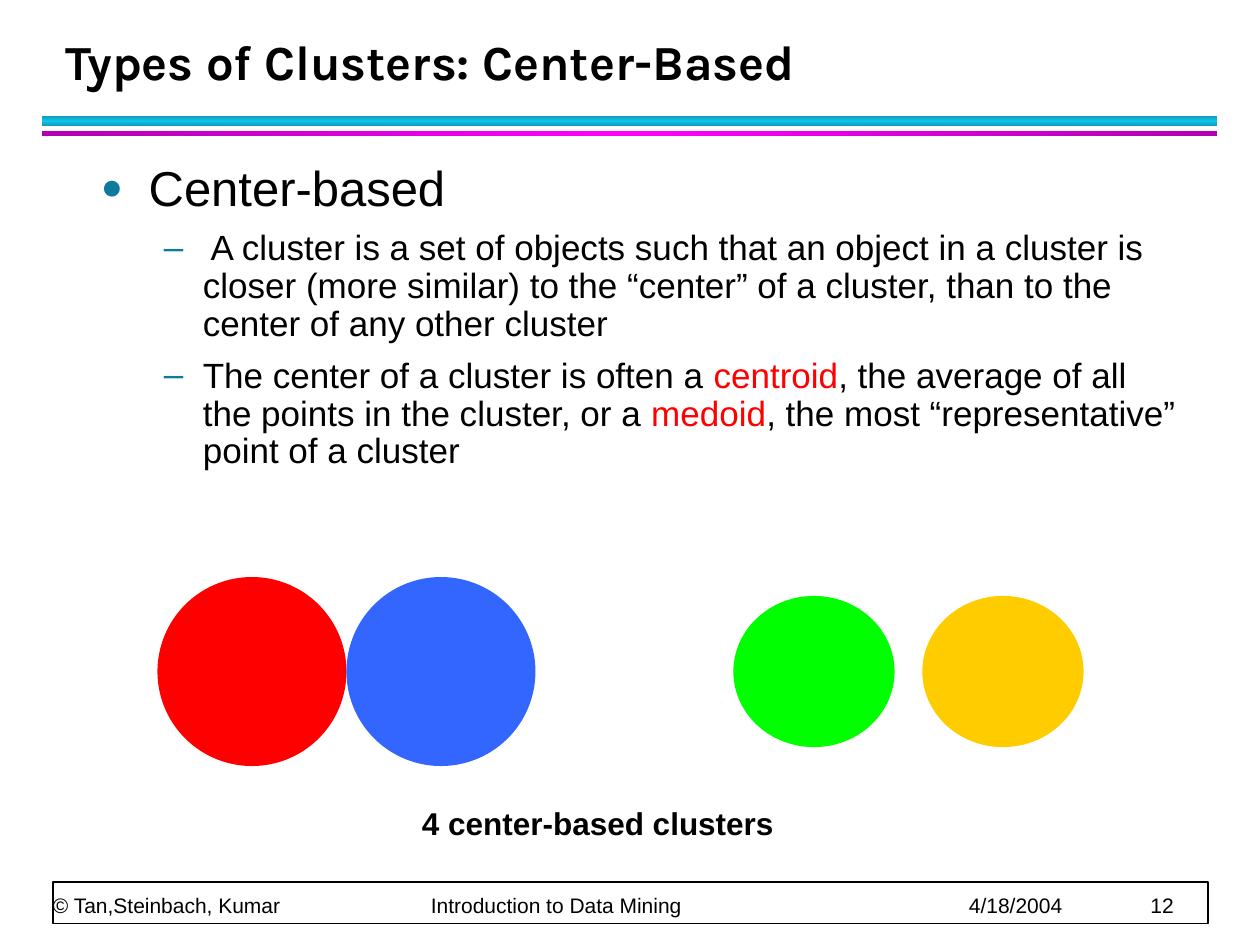
"""Build the slide on center-based clusters."""
from lxml import etree
from pptx import Presentation
from pptx import util as u
from pptx.dml.color import RGBColor
from pptx.enum import shapes, text
from pptx.oxml.ns import qn

hues = {"ink": "000000", "paper": "FFFFFF", "teal": "0C7B9C", "red": "FF0000",
        "blue": "3366FF", "green": "00FF00", "gold": "FFCC00",
        "cyan": "12C2E9", "deep": "0E9BBA", "pink": "FF00FF", "plum": "B200B2"}


def tint(name):
    return RGBColor.from_string(hues[name])


def write(para, parts, size, font="Arial", bold=False):
    for words, hue in parts:
        run = para.add_run()
        run.text = words
        look = {"size": u.Pt(size), "name": font, "bold": bold}
        for key, val in look.items():
            setattr(run.font, key, val)
        run.font.color.rgb = tint(hue)


deck = Presentation()
deck.slide_width, deck.slide_height = u.Inches(10), u.Inches(7.5)
slide = deck.slides.add_slide(deck.slide_layouts[1])
items = slide.shapes

for top, high, edge, core, angle in [(0.92, 0.08, "deep", "cyan", 90),
                                     (1.04, 0.04, "plum", "pink", 0)]:
    bar = items.add_shape(shapes.MSO_SHAPE.RECTANGLE, u.Inches(0.33),
                          u.Inches(top), u.Inches(9.33), u.Inches(high))
    bar.shadow.inherit = False
    bar.line.fill.background()
    bar.fill.gradient()
    bar.fill.gradient_angle = angle
    stops = bar.fill._fill._gradFill.find(qn("a:gsLst"))
    for stop in list(stops):
        stops.remove(stop)
    for pos, hue in [(0, edge), (50, core), (100, edge)]:
        stop = etree.SubElement(stops, qn("a:gs"), pos=str(pos * 1000))
        etree.SubElement(stop, qn("a:srgbClr"), val=hues[hue])

frame = items.add_shape(shapes.MSO_SHAPE.RECTANGLE, u.Inches(0.42),
                        u.Inches(7), u.Inches(9.17), u.Inches(0.33))
frame.shadow.inherit = False
frame.fill.solid()
frame.fill.fore_color.rgb = tint("paper")
frame.line.color.rgb = tint("ink")
frame.line.width = u.Pt(1)

foot = items.add_textbox(u.Inches(0.42), u.Inches(7), u.Inches(9.15), u.Inches(0.28))
style = {"word_wrap": True, "vertical_anchor": text.MSO_ANCHOR.BOTTOM,
         "margin_left": 0, "margin_right": 0, "margin_top": 0, "margin_bottom": 0}
for key, val in style.items():
    setattr(foot.text_frame, key, val)
para = foot.text_frame.paragraphs[0]
para.line_spacing = u.Pt(20)
tabs = etree.SubElement(para._p.get_or_add_pPr(), qn("a:tabLst"))
for pos in (3, 7.27, 8.71):
    etree.SubElement(tabs, qn("a:tab"), pos=str(u.Inches(pos)), algn="l")
write(para, [("© Tan,Steinbach, Kumar\tIntroduction to Data Mining\t4/18/2004\t12", "ink")], 12)

title, body = items.title, slide.placeholders[1]
for box, spot in [(title, (0.42, 0.17, 9.06, 0.6)), (body, (0.7, 1.25, 8.75, 5.59))]:
    box.left, box.top, box.width, box.height = map(u.Inches, spot)
    box.text_frame.word_wrap = True
    box.text_frame.auto_size = text.MSO_AUTO_SIZE.NONE
title.text_frame.vertical_anchor = text.MSO_ANCHOR.BOTTOM
para = title.text_frame.paragraphs[0]
para.alignment = text.PP_ALIGN.LEFT
para.line_spacing = u.Pt(36)
write(para, [("Types of Clusters: Center-Based", "ink")], 28, "Karla", True)

points = [
    (0, [("Center-based", "ink")]),
    (1, [(" A cluster is a set of objects such that an object in a cluster is closer "
          "(more similar) to the “center” of a cluster, than to the center of any "
          "other cluster", "ink")]),
    (1, [("The center of a cluster is often a ", "ink"), ("centroid", "red"),
         (", the average of all the points in the cluster, or a ", "ink"),
         ("medoid", "red"), (", the most “representative” point of a cluster", "ink")]),
]
levels = [(28, 0.38, -0.38, "●", 75, 0), (20, 0.81, -0.31, "–", 100, 4)]
for num, (level, parts) in enumerate(points):
    para = body.text_frame.add_paragraph() if num else body.text_frame.paragraphs[0]
    size, left, hang, mark, scale, gap = levels[level]
    look = {"level": level, "line_spacing": 0.9,
            "space_before": u.Pt(gap), "space_after": u.Pt(4)}
    for key, val in look.items():
        setattr(para, key, val)
    props = para._p.get_or_add_pPr()
    props.set("marL", str(u.Inches(left)))
    props.set("indent", str(u.Inches(hang)))
    shade = etree.SubElement(props, qn("a:buClr"))
    etree.SubElement(shade, qn("a:srgbClr"), val=hues["teal"])
    etree.SubElement(props, qn("a:buSzPct"), val=str(scale * 1000))
    etree.SubElement(props, qn("a:buFont"), typeface="Arial")
    etree.SubElement(props, qn("a:buChar"), char=mark)
    write(para, parts, size)

for left, top, wide, high, hue in [(1.25, 4.58, 1.5, 1.5, "red"),
                                   (2.75, 4.58, 1.5, 1.5, "blue"),
                                   (5.82, 4.73, 1.28, 1.2, "green"),
                                   (7.32, 4.73, 1.28, 1.2, "gold")]:
    disc = items.add_shape(shapes.MSO_SHAPE.OVAL, *map(u.Inches, (left, top, wide, high)))
    disc.shadow.inherit = False
    disc.fill.solid()
    disc.fill.fore_color.rgb = tint(hue)
    disc.line.fill.background()

note = items.add_textbox(u.Inches(3.25), u.Inches(6.33), u.Inches(3.5), u.Inches(0.4))
note.text_frame.word_wrap = True
write(note.text_frame.paragraphs[0], [("4 center-based clusters", "ink")], 18, bold=True)

deck.save("out.pptx")
